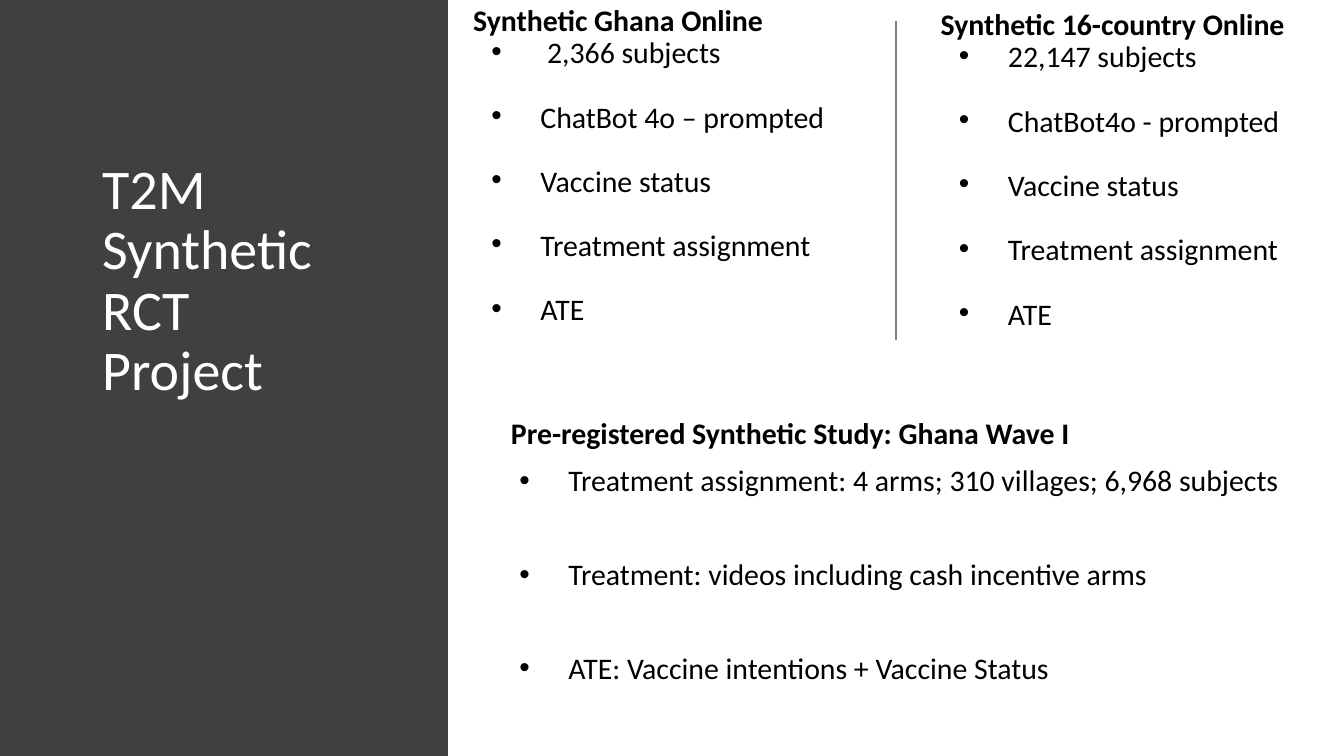
"""Builds the slide that summarises the T2M synthetic RCT project."""
from lxml.etree import SubElement
from pptx import Presentation
from pptx.dml.color import RGBColor
from pptx.enum.shapes import MSO_CONNECTOR as Connector, MSO_SHAPE as Shape
from pptx.enum.text import MSO_ANCHOR as Anchor, MSO_AUTO_SIZE as AutoSize, PP_ALIGN as Align
from pptx.oxml.ns import qn
from pptx.util import Pt

PX = 9525
WHITE = RGBColor(0xFF, 0xFF, 0xFF)
BLACK = RGBColor(0, 0, 0)
CHARCOAL = RGBColor(0x40, 0x40, 0x40)
GRAY = RGBColor(0x7F, 0x7F, 0x7F)
FONT = "Calibri"

SHARED_STEPS = ["Vaccine status", "Treatment assignment", "ATE"]
GHANA = [" 2,366 subjects", "ChatBot 4o – prompted", *SHARED_STEPS]
COUNTRIES = ["22,147 subjects", "ChatBot4o - prompted", *SHARED_STEPS]
STUDY = [
    "Treatment assignment: 4 arms; 310 villages; 6,968 subjects",
    "Treatment: videos including cash incentive arms",
    "ATE: Vaccine intentions + Vaccine Status",
]


def px(*lengths):
    return [length * PX for length in lengths]


def place(box, area):
    box.left, box.top, box.width, box.height = px(*area)
    frame = box.text_frame
    frame.word_wrap = True
    frame.auto_size = AutoSize.NONE
    frame.vertical_anchor = Anchor.TOP
    frame.margin_left, frame.margin_right = px(7, 7)
    frame.margin_top, frame.margin_bottom = px(4, 4)
    return frame


def set_bullet(para, shown):
    properties = para._p.get_or_add_pPr()
    if not shown:
        SubElement(properties, qn("a:buNone"))
        return
    color = SubElement(properties, qn("a:buClr"))
    SubElement(color, qn("a:srgbClr"), val=str(BLACK))
    SubElement(properties, qn("a:buFont"), typeface="Arial")
    SubElement(properties, qn("a:buChar"), char="•")


def add_text(frame, text, *, size=16, color=BLACK, bold=False, line=0.9,
             before=0, indent=0, hanging=0, bullet=False):
    para = frame.paragraphs[0]
    if para.runs:
        para = frame.add_paragraph()
    para.alignment = Align.LEFT
    para.line_spacing = line
    para.space_before = Pt(before)
    para.space_after = Pt(0)
    properties = para._p.get_or_add_pPr()
    properties.set("marL", str(indent * PX))
    properties.set("indent", str(-hanging * PX))
    set_bullet(para, bullet)
    span = para.add_run()
    span.text = text
    span.font.name = FONT
    span.font.size = Pt(size)
    span.font.bold = bold
    span.font.color.rgb = color


def fill_list(box, area, heading, items, *, line, first_gap, gap, heading_indent=0):
    frame = place(box, area)
    add_text(frame, heading, bold=True, line=line, indent=heading_indent)
    for index, item in enumerate(items):
        add_text(frame, item, line=line, before=gap if index else first_gap,
                 indent=48, hanging=35, bullet=True)


def fill_title(box, area, lines):
    frame = place(box, area)
    for text in lines:
        add_text(frame, text, size=30, color=WHITE)


def add_panel(page, area):
    panel = page.shapes.add_shape(Shape.RECTANGLE, *px(*area))
    panel.shadow.inherit = False
    panel.fill.solid()
    panel.fill.fore_color.rgb = CHARCOAL
    panel.line.fill.background()
    page.shapes._spTree.insert(2, panel._element)


def add_divider(page, ends):
    divider = page.shapes.add_connector(Connector.STRAIGHT, *px(*ends))
    divider.line.color.rgb = GRAY
    divider.line.width = Pt(1)
    SubElement(divider._element.spPr, qn("a:effectLst"))


def main():
    deck = Presentation()
    deck.slide_width, deck.slide_height = px(960, 540)
    page = deck.slides.add_slide(deck.slide_layouts[3])
    title, ghana, study = list(page.placeholders)[:3]

    add_panel(page, (0, 0, 320, 540))
    fill_title(title, (66, 111, 228, 344), ["T2M", "Synthetic RCT", "Project"])

    compact = {"line": 0.7, "first_gap": 4, "gap": 21}
    fill_list(ghana, (331, 4, 297, 288), "Synthetic Ghana Online", GHANA, **compact)
    add_divider(page, (640, 15, 640, 243))
    countries = page.shapes.add_textbox(0, 0, 0, 0)
    fill_list(countries, (665, 7, 274, 288), "Synthetic 16-country Online",
              COUNTRIES, **compact)
    fill_list(study, (351, 295, 579, 271), "Pre-registered Synthetic Study: Ghana Wave I",
              STUDY, line=0.9, first_gap=8, gap=33, heading_indent=7)
    deck.save("out.pptx")


if __name__ == "__main__":
    main()
